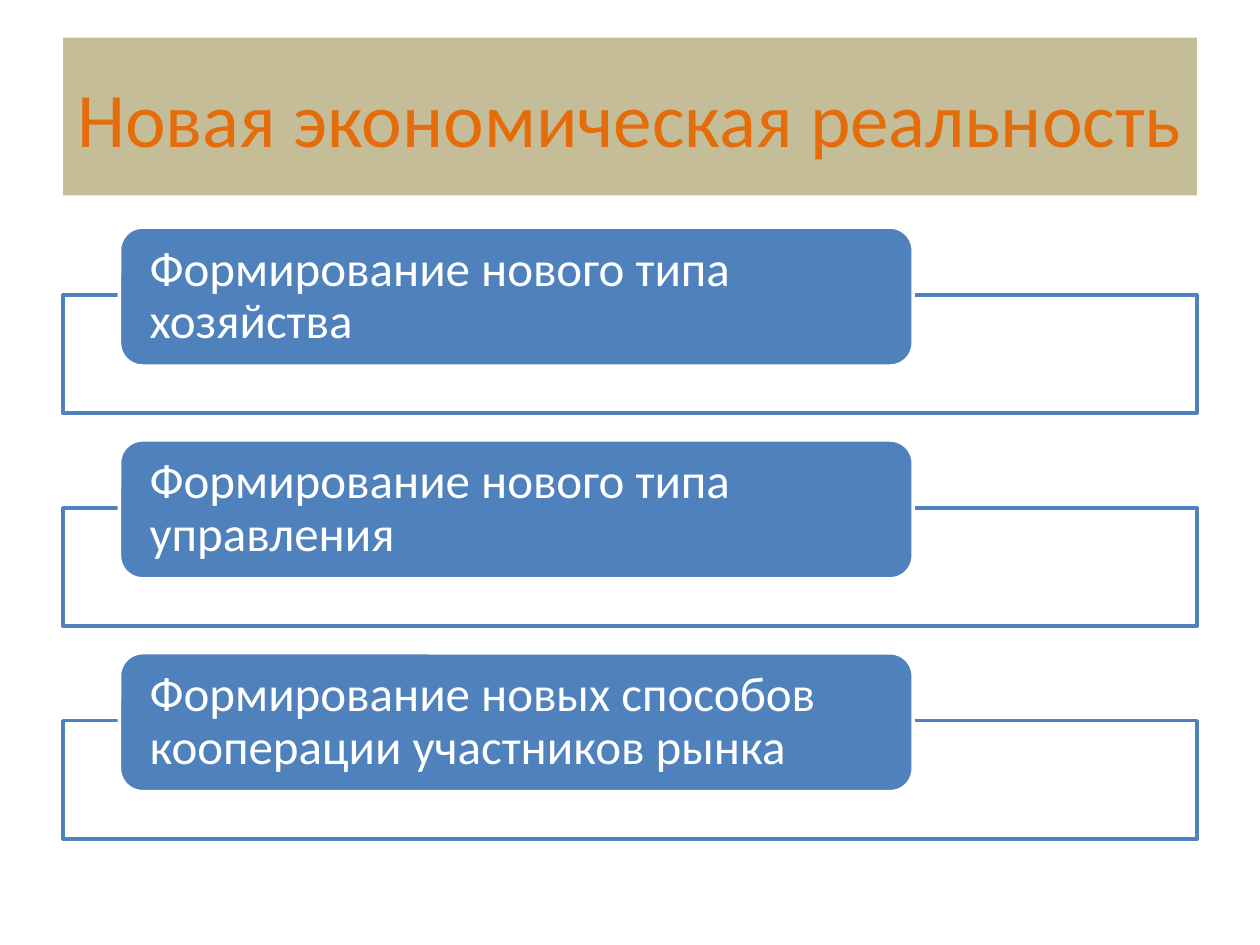
from lxml import etree
from pptx import Presentation
from pptx.dml.color import RGBColor
from pptx.enum.shapes import MSO_SHAPE
from pptx.enum.text import MSO_ANCHOR, PP_ALIGN
from pptx.oxml.ns import qn
from pptx.util import Cm, Pt

RECTANGLE = MSO_SHAPE.RECTANGLE
ROUNDED = MSO_SHAPE.ROUNDED_RECTANGLE
MIDDLE = MSO_ANCHOR.MIDDLE
LEFT, CENTER = PP_ALIGN.LEFT, PP_ALIGN.CENTER

THEME = {
    "font": "Calibri",
    "title_size": Pt(44),
    "label_size": Pt(28),
    "line_width": Pt(2),
    "title_fill": RGBColor(0xC4, 0xBD, 0x97),
    "title_text": RGBColor(0xE4, 0x6C, 0x0A),
    "blue": RGBColor(0x4F, 0x81, 0xBD),
    "white": RGBColor(0xFF, 0xFF, 0xFF),
}

CHANGES = [
    "Формирование нового типа хозяйства",
    "Формирование нового типа управления",
    "Формирование новых способов кооперации участников рынка",
]

MARGIN, CONTENT_WIDTH = Cm(1.27), Cm(22.86)
FIRST_LABEL_TOP, ROW_PITCH = Cm(4.58), Cm(4.29)
LABEL_LEFT, LABEL_WIDTH, LABEL_HEIGHT = Cm(2.41), Cm(16), Cm(2.8)
FRAME_DROP, FRAME_HEIGHT = Cm(1.37), Cm(2.38)


def add_box(kind, left, top, width, height, fill, line):
    box = slide.shapes.add_shape(kind, left, top, width, height)
    box.shadow.inherit = False
    box.fill.solid()
    box.fill.fore_color.rgb = fill
    box.line.color.rgb = line
    box.line.width = THEME["line_width"]
    return box


def write(frame, text, size, color, align):
    frame.word_wrap = True
    frame.vertical_anchor = MIDDLE
    paragraph = frame.paragraphs[0]
    paragraph.alignment = align
    run = paragraph.add_run()
    run.text = text
    run.font.name = THEME["font"]
    run.font.size = size
    run.font.color.rgb = color
    return paragraph


prs = Presentation()
prs.slide_width, prs.slide_height = Cm(25.4), Cm(19.05)
slide = prs.slides.add_slide(prs.slide_layouts[5])

# Title band
title = slide.shapes.title
title.left, title.top = MARGIN, Cm(0.76)
title.width, title.height = CONTENT_WIDTH, Cm(3.18)
title.fill.solid()
title.fill.fore_color.rgb = THEME["title_fill"]
write(title.text_frame, "Новая экономическая реальность",
      THEME["title_size"], THEME["title_text"], CENTER)

# One open frame with an overlapping label for each change
for row, change in enumerate(CHANGES):
    label_top = FIRST_LABEL_TOP + row * ROW_PITCH

    frame = add_box(RECTANGLE, MARGIN, label_top + FRAME_DROP, CONTENT_WIDTH,
                    FRAME_HEIGHT, THEME["white"], THEME["blue"])
    frame_color = frame.fill._xPr.find(qn("a:solidFill"))[0]
    etree.SubElement(frame_color, qn("a:alpha"), val="90000")

    label = add_box(ROUNDED, LABEL_LEFT, label_top, LABEL_WIDTH, LABEL_HEIGHT,
                    THEME["blue"], THEME["white"])
    label_text = label.text_frame
    label_text.margin_left = label_text.margin_right = Cm(0.47)
    label_text.margin_top = label_text.margin_bottom = 0
    paragraph = write(label_text, change, THEME["label_size"],
                      THEME["white"], LEFT)
    paragraph.line_spacing = 0.9

prs.save("out.pptx")
